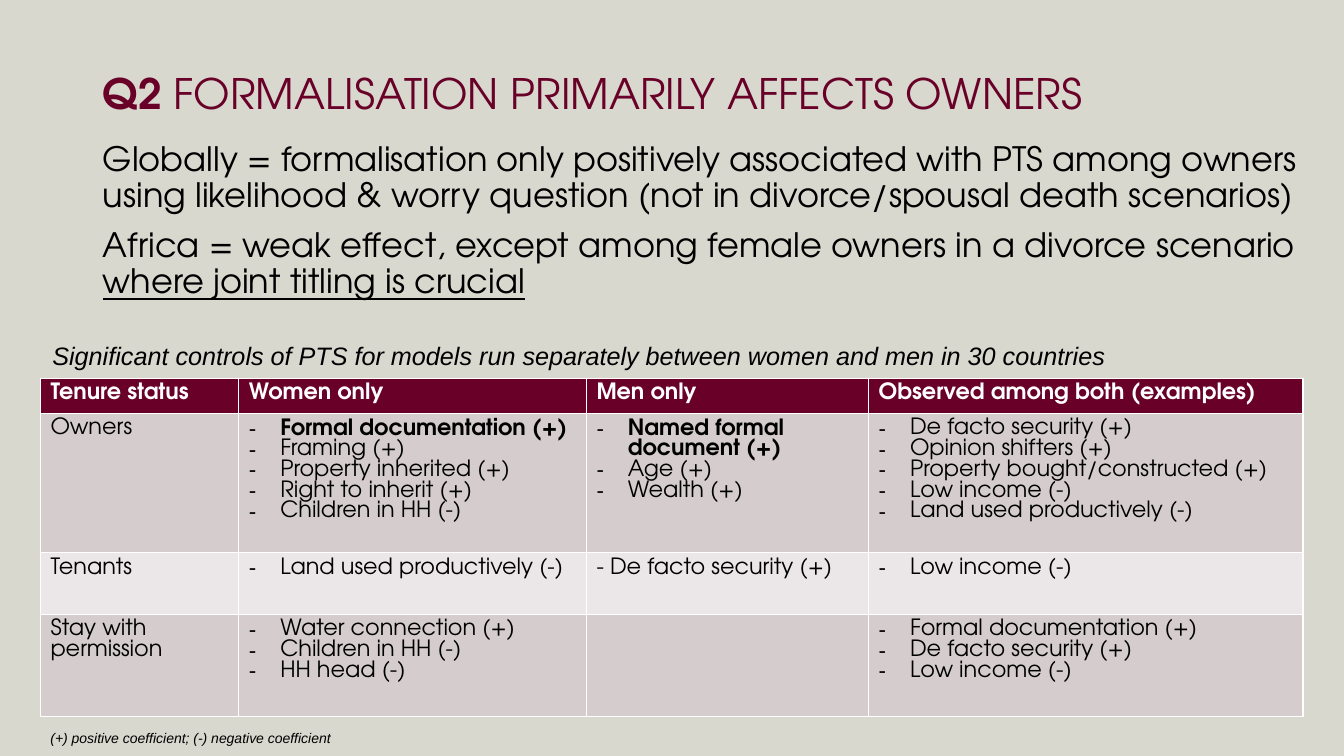
from dataclasses import dataclass

from lxml import etree
from pptx import Presentation
from pptx import util as u
from pptx.dml.color import RGBColor
from pptx.enum import text
from pptx.oxml import ns


@dataclass(frozen=True)
class Theme:
    background: str = "D8D8CF"
    accent: str = "690028"
    ink: str = "000000"
    white: str = "FFFFFF"
    dark_band: str = "D4CCCD"
    light_band: str = "EBE7E8"
    display: str = "TeX Gyre Adventor"
    plain: str = "Arial"
    title_size: int = 30
    body_size: int = 24
    caption_size: int = 18
    table_size: int = 16
    note_size: int = 10


theme = Theme()


def style(span, size, color, face=theme.display, bold=False, italic=False):
    span.font.name = face
    span.font.size = u.Pt(size)
    span.font.bold = bold
    span.font.italic = italic
    span.font.color.rgb = RGBColor.from_string(color)


def place(box, left, top, width, height):
    box.left, box.top, box.width, box.height = map(u.Cm, (left, top, width, height))
    frame = box.text_frame
    frame.word_wrap = True
    frame.auto_size = text.MSO_AUTO_SIZE.NONE
    frame.vertical_anchor = text.MSO_ANCHOR.TOP
    return frame


deck = Presentation()
deck.slide_width, deck.slide_height = u.Cm(33.87), u.Cm(19.05)
page = deck.slides.add_slide(deck.slide_layouts[1])
page.background.fill.solid()
page.background.fill.fore_color.rgb = RGBColor.from_string(theme.background)

body = place(page.placeholders[1], 2.34, 3.45, 31.17, 12.8)
statements = [
    ["Globally = formalisation only positively associated with PTS among owners "
     "using likelihood & worry question (not in divorce/spousal death scenarios)"],
    ["Africa = weak effect, except among female owners in a divorce scenario ",
     "where joint titling is crucial"],
]
for index, parts in enumerate(statements):
    para = body.add_paragraph() if index else body.paragraphs[0]
    para.line_spacing = 0.9
    para.space_before = u.Pt(10)
    for position, part in enumerate(parts):
        span = para.add_run()
        span.text = part
        style(span, theme.body_size, theme.ink)
        span.font.underline = position == 1
    properties = para._p.get_or_add_pPr()
    properties.set("marL", "0")
    properties.set("indent", "0")
    etree.SubElement(properties, ns.qn("a:buNone"))

rows = [
    ["Tenure status", "Women only", "Men only", "Observed among both (examples)"],
    ["Owners",
     ["Formal documentation (+)", "Framing (+)", "Property inherited (+)",
      "Right to inherit (+)", "Children in HH (-)"],
     ["Named formal document (+)", "Age (+)", "Wealth (+)"],
     ["De facto security (+)", "Opinion shifters (+)",
      "Property bought/constructed (+)", "Low income (-)",
      "Land used productively (-)"]],
    ["Tenants", ["Land used productively (-)"], "- De facto security (+)",
     ["Low income (-)"]],
    ["Stay with permission",
     ["Water connection (+)", "Children in HH (-)", "HH head (-)"], "",
     ["Formal documentation (+)", "De facto security (+)", "Low income (-)"]],
]
strong = {(1, 1), (1, 2)}
fills = [theme.accent, theme.dark_band, theme.light_band, theme.dark_band]
widths = [5, 8.76, 7.11, 10.95]
heights = [0.89, 3.51, 1.55, 2.57]
table = page.shapes.add_table(
    len(rows), len(widths), u.Cm(1.02), u.Cm(9.53),
    u.Cm(sum(widths)), u.Cm(sum(heights))).table
for column, width in zip(table.columns, widths):
    column.width = u.Cm(width)
for row, height in zip(table.rows, heights):
    row.height = u.Cm(height)

for r, entries in enumerate(rows):
    for c, entry in enumerate(entries):
        cell = table.cell(r, c)
        cell.fill.solid()
        cell.fill.fore_color.rgb = RGBColor.from_string(fills[r])
        bulleted = isinstance(entry, list)
        cell.text_frame.text = "\n".join(entry) if bulleted else entry
        for index, para in enumerate(cell.text_frame.paragraphs):
            para.line_spacing = u.Pt(14.8)
            bold = r == 0 or (index == 0 and (r, c) in strong)
            for span in para.runs:
                style(span, theme.table_size, theme.ink if r else theme.white, bold=bold)
            if bulleted:
                properties = para._p.get_or_add_pPr()
                properties.set("marL", str(u.Cm(0.79)))
                properties.set("indent", str(-u.Cm(0.79)))
                etree.SubElement(properties, ns.qn("a:buFont"), typeface=theme.plain)
                etree.SubElement(properties, ns.qn("a:buChar"), char="-")

captions = [
    ("Significant controls of PTS for models run separately between women and men "
     "in 30 countries", theme.caption_size, (1.07, 8.46, 32.08, 1.02)),
    ("(+) positive coefficient; (-) negative coefficient",
     theme.note_size, (1.02, 18.26, 30.84, 0.69)),
]
for words, size, area in captions:
    frame = place(page.shapes.add_textbox(0, 0, 0, 0), *area)
    frame.text = words
    style(frame.paragraphs[0].runs[0], size, theme.ink, theme.plain, italic=True)

heading = place(page.shapes.title, 2.34, 1.73, 29.21, 2.97).paragraphs[0]
heading.alignment = text.PP_ALIGN.LEFT
heading.line_spacing = 0.9
for words, bold in [("Q2", True), (" FORMALISATION PRIMARILY AFFECTS OWNERS", False)]:
    span = heading.add_run()
    span.text = words
    style(span, theme.title_size, theme.accent, bold=bold)

deck.save("out.pptx")
